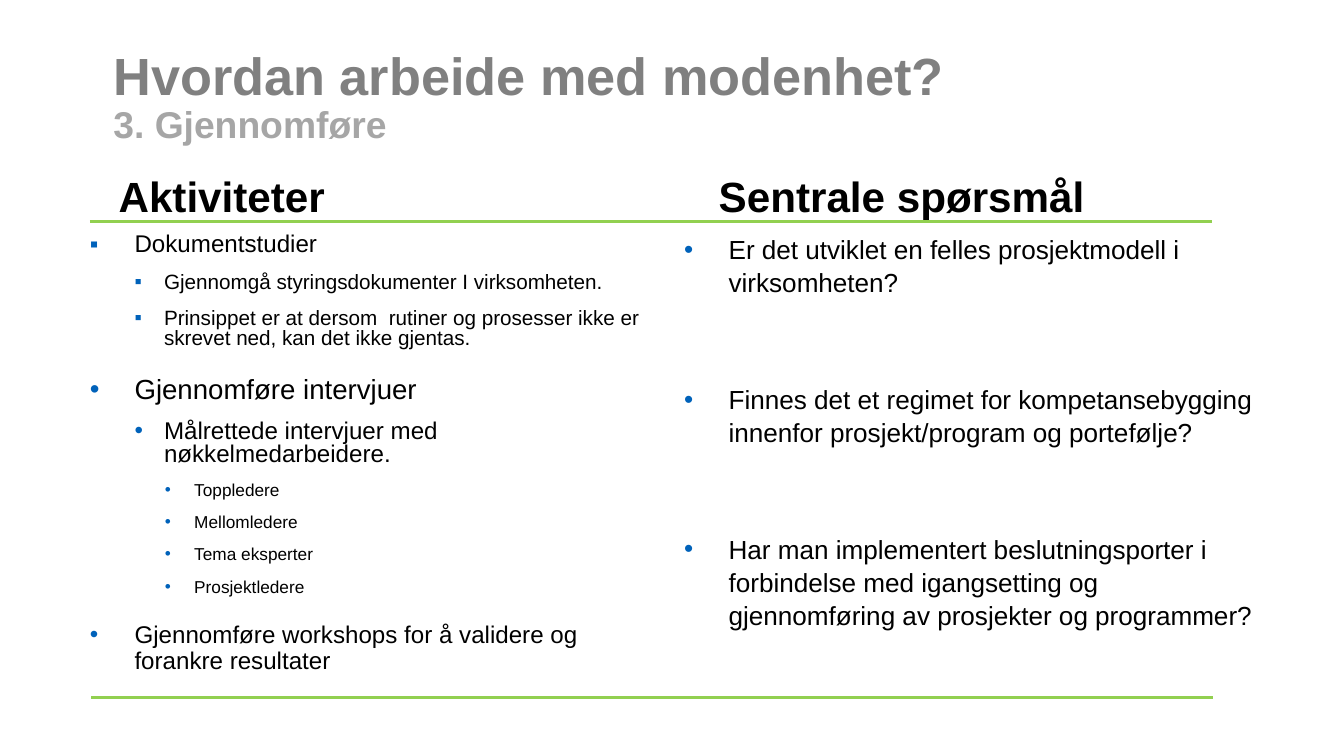
"""Build the slide on working with maturity, step 3."""
from lxml import etree
from pptx import Presentation
from pptx import util as u
from pptx.dml import color
from pptx.enum import shapes, text
from pptx.oxml import ns

BLACK, BLUE, GREEN = "000000", "0062BA", "92D050"
TITLE_GREY, SUBTITLE_GREY = "808080", "A6A6A6"
SQUARE, DOT = "▪", "•"
LEFT_INDENTS = [0.59, 0.98, 1.38]
HANGING = [0.59, 0.39, 0.39]
LEVEL_FORMATS = [
    {"line_spacing": 0.9, "space_before": u.Pt(25)},
    {"line_spacing": 0.8, "space_before": u.Pt(15)},
    {"line_spacing": 0.8, "space_before": u.Pt(15)},
]
QUESTION_FORMATS = [{"line_spacing": 1.05, "space_before": u.Pt(80)}]

ACTIVITIES = [
    (0, SQUARE, 23, "Dokumentstudier"),
    (1, SQUARE, 19.7, "Gjennomgå styringsdokumenter I virksomheten."),
    (1, SQUARE, 19.7, "Prinsippet er at dersom  rutiner og prosesser ikke er skrevet ned, kan det ikke gjentas."),
    (0, DOT, 26.3, "Gjennomføre intervjuer"),
    (1, DOT, 23, "Målrettede intervjuer med nøkkelmedarbeidere."),
    (2, DOT, 16.4, "Toppledere"),
    (2, DOT, 16.4, "Mellomledere"),
    (2, DOT, 16.4, "Tema eksperter"),
    (2, DOT, 16.4, "Prosjektledere"),
    (0, DOT, 23, "Gjennomføre workshops for å validere og forankre resultater"),
]
QUESTIONS = [
    (0, DOT, 24.9, "Er det utviklet en felles prosjektmodell i virksomheten?"),
    (0, DOT, 24.9, "Finnes det et regimet for kompetansebygging innenfor prosjekt/program og portefølje?"),
    (0, DOT, 24.9, "Har man implementert beslutningsporter i forbindelse med igangsetting og "
                   "gjennomføring av prosjekter og programmer?"),
]


def rgb(value):
    return color.RGBColor.from_string(value)


def apply(target, formats):
    for name, value in formats.items():
        setattr(target, name, value)


class SlideWriter:
    def __init__(self, page, font_name):
        self.page = page
        self.font_name = font_name

    def text_box(self, left, top, width, height, formats):
        box = self.page.shapes.add_textbox(*map(u.Inches, (left, top, width, height)))
        apply(box.text_frame, formats)
        return box.text_frame

    def body_box(self, left, top, width, height, **formats):
        margins = {f"margin_{side}": 0 for side in ("left", "top", "right", "bottom")}
        return self.text_box(left, top, width, height, {"word_wrap": True, **margins, **formats})

    def span(self, para, words, size, ink=BLACK, bold=False):
        span = para.add_run()
        span.text = words
        apply(span.font, {"name": self.font_name, "size": u.Pt(size), "bold": bold})
        span.font.color.rgb = rgb(ink)

    def title(self, heading, subheading):
        frame = self.body_box(1.5, 0.65, 15, 1.29, vertical_anchor=text.MSO_ANCHOR.BOTTOM)
        para = frame.paragraphs[0]
        para.line_spacing = 0.9
        self.span(para, heading, 49.8, TITLE_GREY, True)
        para.add_line_break()
        self.span(para, subheading, 35.5, SUBTITLE_GREY, True)

    def column_heading(self, left, width, words):
        frame = self.text_box(left, 2.21, width, 0.78, {"word_wrap": False})
        self.span(frame.paragraphs[0], words, 40.2, bold=True)

    def bullet(self, para, level, mark):
        props = para._p.get_or_add_pPr()
        props.set("marL", str(u.Inches(LEFT_INDENTS[level])))
        props.set("indent", str(-u.Inches(HANGING[level])))
        ink = etree.SubElement(props, ns.qn("a:buClr"))
        etree.SubElement(ink, ns.qn("a:srgbClr"), val=BLUE)
        etree.SubElement(props, ns.qn("a:buFont"), typeface=self.font_name)
        etree.SubElement(props, ns.qn("a:buChar"), char=mark)

    def bullet_list(self, left, items, level_formats):
        frame = self.body_box(left, 3.07, 7.53, 5.92)
        for index, (level, mark, size, words) in enumerate(items):
            para = frame.add_paragraph() if index else frame.paragraphs[0]
            self.bullet(para, level, mark)
            apply(para, {"level": level, **level_formats[level]})
            if not index:
                para.space_before = u.Pt(0)
            self.span(para, words, size)

    def rule(self, left, top, width):
        ends = map(u.Inches, (left, top, left + width, top))
        line = self.page.shapes.add_connector(shapes.MSO_CONNECTOR.STRAIGHT, *ends)
        line.line.color.rgb = rgb(GREEN)
        line.line.width = u.Pt(3)
        etree.SubElement(line._element.spPr, ns.qn("a:effectLst"))


def main():
    deck = Presentation()
    apply(deck, {"slide_width": u.Inches(17.78), "slide_height": u.Inches(10)})
    writer = SlideWriter(deck.slides.add_slide(deck.slide_layouts[6]), "Arial")
    writer.bullet_list(1.19, ACTIVITIES, LEVEL_FORMATS)
    writer.bullet_list(9.05, QUESTIONS, QUESTION_FORMATS)
    writer.title("Hvordan arbeide med modenhet?", "3. Gjennomføre")
    writer.column_heading(9.41, 5.09, "Sentrale spørsmål")
    writer.column_heading(1.47, 2.96, "Aktiviteter")
    for left, top in ((1.19, 2.93), (1.21, 9.23)):
        writer.rule(left, top, 14.84)
    deck.save("out.pptx")


if __name__ == "__main__":
    main()
